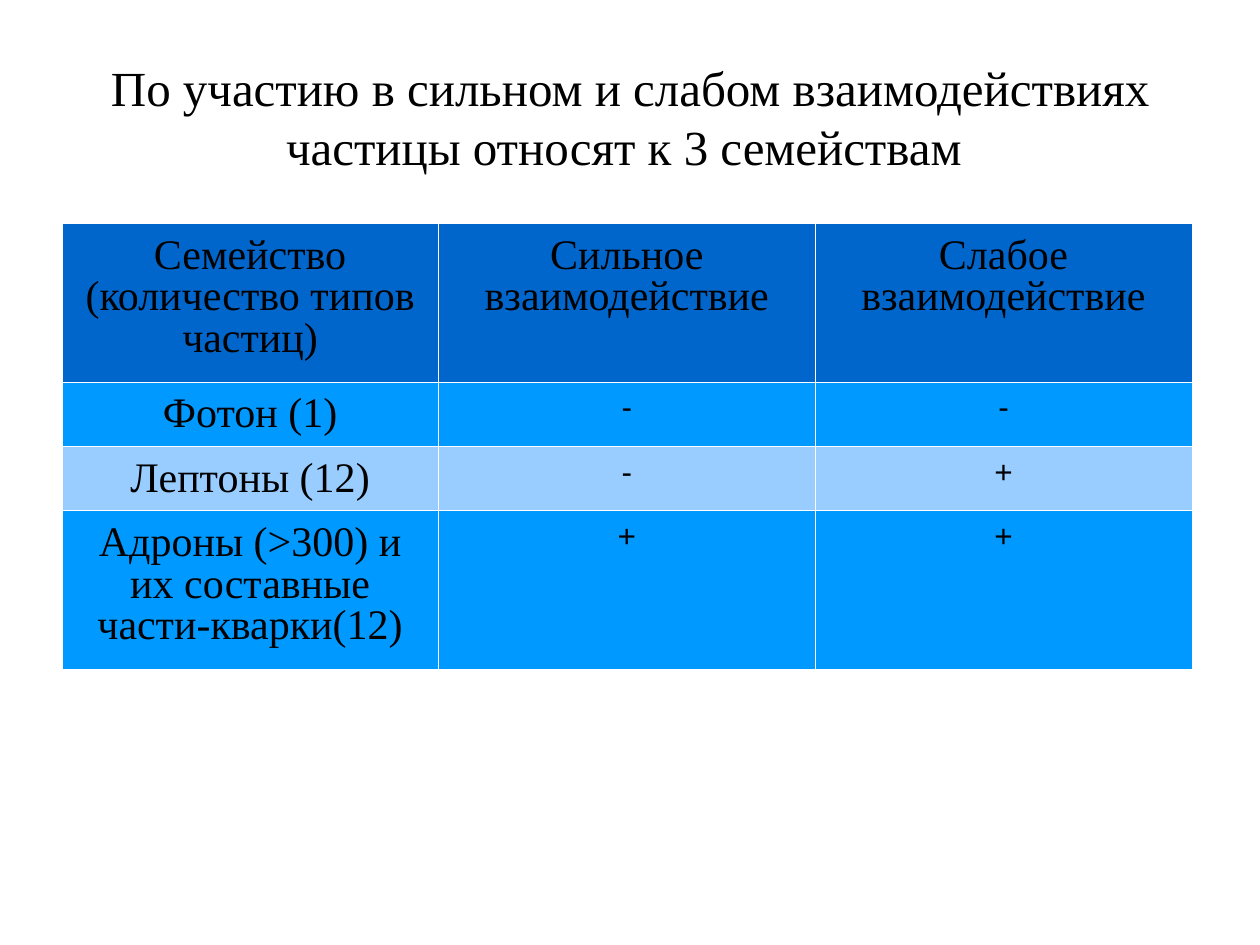
from lxml import etree
from pptx import Presentation
from pptx import util as u
from pptx.dml.color import RGBColor
from pptx.enum import text
from pptx.oxml.ns import qn

BLACK = RGBColor(0x00, 0x00, 0x00)
WHITE = RGBColor(0xFF, 0xFF, 0xFF)
HEADER_BLUE = RGBColor(0x00, 0x66, 0xCC)
ROW_BLUES = [RGBColor(0x00, 0x99, 0xFF), RGBColor(0x99, 0xCC, 0xFF)]

SERIF, SANS = "Times New Roman", "Arial"
TITLE = "По участию в сильном и слабом взаимодействиях частицы относят к 3 семействам "
FAMILIES = [
    ("Семейство (количество типов частиц)", "Сильное взаимодействие", "Слабое взаимодействие"),
    ("Фотон (1)", "-", "-"),
    ("Лептоны (12)", "-", "+"),
    ("Адроны (>300) и их составные части-кварки(12)", "+", "+"),
]
TALL, SHORT = u.Inches(1.26), u.Inches(0.51)
ROW_HEIGHTS = [TALL, SHORT, SHORT, TALL]
COLUMN_WIDTH = u.Inches(2.99)


def write(paragraph, wording, size, font_name):
    paragraph.alignment = text.PP_ALIGN.CENTER
    run = paragraph.add_run()
    run.text = wording
    run.font.size = u.Pt(size)
    run.font.name = font_name
    run.font.color.rgb = BLACK


def add_title(slide):
    title = slide.shapes.title
    title.left, title.top = u.Inches(0.5), u.Inches(0.3)
    title.width, title.height = u.Inches(9), u.Inches(1.25)
    frame = title.text_frame
    frame.vertical_anchor = text.MSO_ANCHOR.MIDDLE
    frame.auto_size = text.MSO_AUTO_SIZE.NONE
    write(frame.paragraphs[0], TITLE, 28, SERIF)


def add_borders(cell):
    """Draw hairlines on all four sides; they must precede the cell's fill."""
    properties = cell._tc.get_or_add_tcPr()
    for position, side in enumerate(("lnL", "lnR", "lnT", "lnB")):
        line = etree.Element(qn(f"a:{side}"), w=str(u.Pt(0.11)))
        fill = etree.SubElement(line, qn("a:solidFill"))
        etree.SubElement(fill, qn("a:srgbClr"), val=str(WHITE))
        properties.insert(position, line)


def fill_cell(cell, wording, colour):
    is_sign = wording in ("+", "-")
    cell.fill.solid()
    cell.fill.fore_color.rgb = colour
    cell.margin_left = cell.margin_right = cell.margin_top = u.Inches(0.1)
    cell.margin_bottom = u.Inches(0.05)
    paragraph = cell.text_frame.paragraphs[0]
    paragraph.line_spacing = 0.87 if is_sign else 0.9
    write(paragraph, wording, *((18, SANS) if is_sign else (24, SERIF)))
    add_borders(cell)


def add_family_table(slide):
    columns = len(FAMILIES[0])
    table = slide.shapes.add_table(
        len(FAMILIES), columns, u.Inches(0.49), u.Inches(1.77),
        COLUMN_WIDTH * columns, sum(ROW_HEIGHTS)).table
    for column in table.columns:
        column.width = COLUMN_WIDTH
    for r, (family, height) in enumerate(zip(FAMILIES, ROW_HEIGHTS)):
        table.rows[r].height = height
        colour = ROW_BLUES[(r - 1) % 2] if r else HEADER_BLUE
        for c, wording in enumerate(family):
            fill_cell(table.cell(r, c), wording, colour)


def main():
    deck = Presentation()
    deck.slide_width, deck.slide_height = u.Inches(10), u.Inches(7.5)
    title_only = deck.slide_layouts[5]
    slide = deck.slides.add_slide(title_only)
    add_title(slide)
    add_family_table(slide)
    deck.save("out.pptx")


if __name__ == "__main__":
    main()
